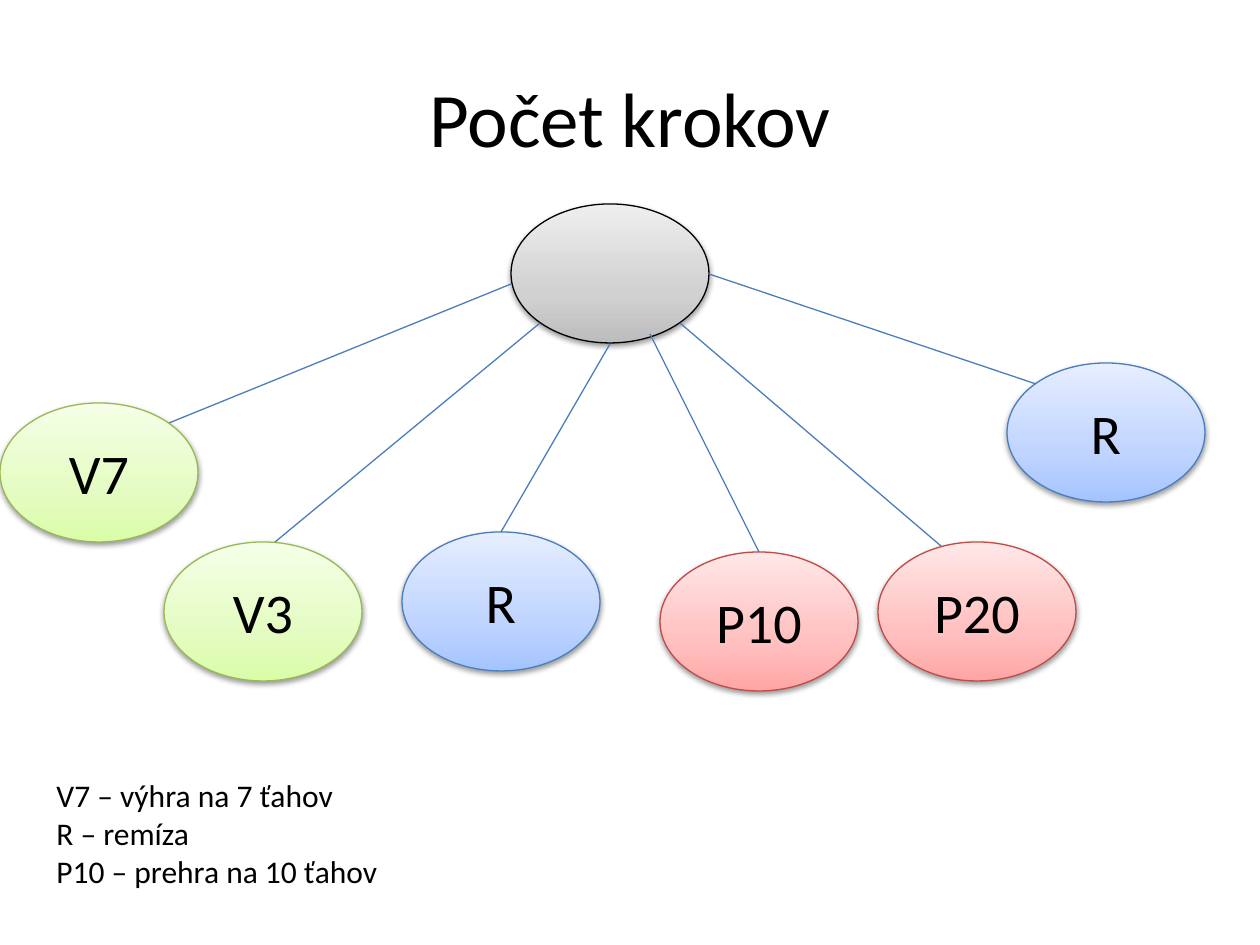
from lxml.etree import SubElement as Sub
from pptx import Presentation
from pptx.dml.color import RGBColor as Rgb
from pptx.enum.shapes import MSO_CONNECTOR as Link, MSO_SHAPE as Kind
from pptx.enum.text import MSO_ANCHOR as Anchor, MSO_AUTO_SIZE as Auto, PP_ALIGN as Align
from pptx.oxml.ns import qn
from pptx.util import Emu, Pt

SCALE = 914400 / 126
SIZE = (198, 139)
HEX = {"text": "000000", "edge": "4B7EBC"}
# Line colour, then the gradient from bottom to top
TONES = {
    "root": ("000000", "BDBDBD", "D1D1D1", "EEEEEE"),
    "win": ("98B955", "DAFDA7", "E4FCC2", "F5FFE7"),
    "draw": ("4B7EBC", "A4C4FF", "BFD4FF", "E6EEFF"),
    "loss": ("BF4C48", "FFA6A5", "FFC0BF", "FFE7E7"),
}
STOPS = (0, 35, 100)
ROOT = (511, 204)
# Label, tone, corner, start and end of the edge
NODES = [
    ("V7", "win", (0, 403), (511, 284), (169, 423)),
    ("V3", "win", (164, 542), (540, 323), (263, 552)),
    ("R", "draw", (402, 532), (610, 344), (501, 532)),
    ("P10", "loss", (660, 552), (650, 334), (759, 552)),
    ("P20", "loss", (878, 542), (680, 323), (948, 552)),
    ("R", "draw", (1007, 363), (709, 274), (1036, 384)),
]
LEGEND = ["V7 – výhra na 7 ťahov", "R – remíza", "P10 – prehra na 10 ťahov"]


def px(*nums):
    return [Emu(round(n * SCALE)) for n in nums]


def style(frame, size, align):
    for para in frame.paragraphs:
        para.alignment = align
        for run in para.runs:
            run.font.size = Pt(size)
            run.font.name = "Calibri"
            run.font.color.rgb = Rgb.from_string(HEX["text"])


def stroke(line, color):
    line.color.rgb = Rgb.from_string(color)
    line.width = Pt(0.75)


def shade(props, colors):
    """Add an upward gradient with one stop per colour."""
    grad = Sub(props, qn("a:gradFill"), rotWithShape="1")
    stops = Sub(grad, qn("a:gsLst"))
    for pos, color in zip(STOPS, colors):
        stop = Sub(stops, qn("a:gs"), pos=str(pos * 1000))
        Sub(stop, qn("a:srgbClr"), val=color)
    Sub(grad, qn("a:lin"), ang=str(270 * 60000), scaled="0")


def drop(props):
    """Add a soft shadow straight below."""
    glow = Sub(Sub(props, qn("a:effectLst")), qn("a:outerShdw"),
               blurRad="40000", dist="20000", dir=str(90 * 60000), rotWithShape="0")
    color = Sub(glow, qn("a:srgbClr"), val=HEX["text"])
    Sub(color, qn("a:alpha"), val="38000")


def add_node(slide, spot, tone, label=""):
    node = slide.shapes.add_shape(Kind.OVAL, *px(*spot, *SIZE))
    props = node._element.spPr
    color, *fills = TONES[tone]
    shade(props, fills)
    stroke(node.line, color)
    drop(props)
    if label:
        node.text_frame.text = label
        node.text_frame.vertical_anchor = Anchor.MIDDLE
        style(node.text_frame, 32, Align.CENTER)


def add_edge(slide, start, end):
    edge = slide.shapes.add_connector(Link.STRAIGHT, *px(*start, *end))
    stroke(edge.line, HEX["edge"])
    Sub(edge._element.spPr, qn("a:effectLst"))


def add_title(slide, text):
    title = slide.shapes.title
    title.left, title.top, title.width, title.height = px(63, 38, 1134, 157)
    title.text_frame.text = text
    title.text_frame.vertical_anchor = Anchor.MIDDLE
    style(title.text_frame, 44, Align.CENTER)


def add_legend(slide, lines):
    frame = slide.shapes.add_textbox(*px(44, 770, 407, 127)).text_frame
    frame.word_wrap = True
    frame.auto_size = Auto.SHAPE_TO_FIT_TEXT
    frame.text = "\n".join(lines)
    style(frame, 18, Align.LEFT)


def main():
    deck = Presentation()
    deck.slide_width, deck.slide_height = px(1260, 945)
    slide = deck.slides.add_slide(deck.slide_layouts[5])
    add_title(slide, "Počet krokov")
    add_node(slide, ROOT, "root")
    for *_, start, end in NODES:
        add_edge(slide, start, end)
    for label, tone, spot, *_ in NODES:
        add_node(slide, spot, tone, label)
    add_legend(slide, LEGEND)
    deck.save("out.pptx")


if __name__ == "__main__":
    main()
